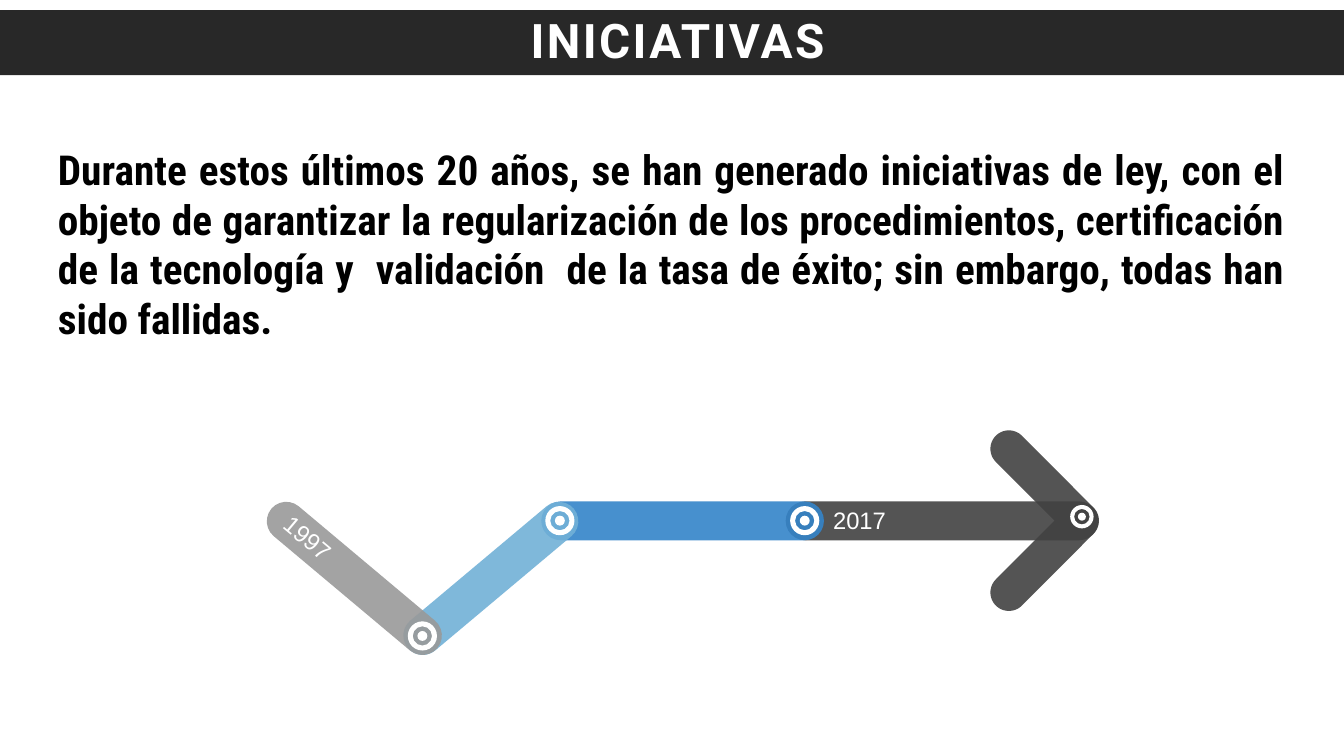
from math import cos, radians, sin

from lxml.etree import SubElement
from pptx import Presentation
from pptx.dml.color import RGBColor
from pptx.enum.shapes import MSO_SHAPE as SHP
from pptx.enum.text import MSO_ANCHOR as ANC, MSO_AUTO_SIZE as AUTO, PP_ALIGN as AL
from pptx.oxml.ns import qn
from pptx.util import Cm, Pt

prs = Presentation()
prs.slide_width, prs.slide_height = Cm(67.74), Cm(38.1)
s = prs.slides.add_slide(prs.slide_layouts[6])


def paint(sp, color, alpha=None):
    sp.shadow.inherit = False
    sp.line.fill.background()
    sp.fill.solid()
    sp.fill.fore_color.rgb = RGBColor.from_string(color)
    if alpha:
        clr = sp.fill._xPr.find(".//" + qn("a:srgbClr"))
        SubElement(clr, qn("a:alpha")).set("val", str(alpha * 1000))


def write(sp, text, color, inset, para, font):
    tf = sp.text_frame
    frame = {"word_wrap": True, "auto_size": AUTO.SHAPE_TO_FIT_TEXT,
             "vertical_anchor": ANC.MIDDLE}
    for side in ("left", "right", "top", "bottom"):
        frame["margin_" + side] = Cm(inset)
    p = tf.paragraphs[0]
    r = p.add_run()
    r.text = text
    for obj, values in ((tf, frame), (p, para), (r.font, font)):
        for name, value in values.items():
            setattr(obj, name, value)
    r.font.color.rgb = RGBColor.from_string(color)
    return r


sp = s.shapes.add_textbox(Cm(2.72), Cm(6.35), Cm(62.28), Cm(11.84))
write(sp, "Durante estos últimos 20 años, se han generado iniciativas de ley, "
      "con el objeto de garantizar la regularización de los procedimientos, "
      "certificación de la tecnología y  validación  de la tasa de éxito; "
      "sin embargo, todas han sido fallidas.", "000000", 0.2,
      {"alignment": AL.JUSTIFY, "space_before": Pt(45)},
      {"name": "Roboto Condensed", "size": Pt(59), "bold": True})

radius, mid = 0.93, 26.24
pts = []
for x, y, start, end in ((50.85, mid - 3.62, 135, 315),
                         (54.46, mid, -45, 45),
                         (50.85, mid + 3.62, 45, 225)):
    for deg in range(start, end + 1, 5):
        a = radians(deg)
        pts.append((Cm(x + radius * cos(a)), Cm(y + radius * sin(a))))
pts.append((Cm(53.15), Cm(mid)))
fb = s.shapes.build_freeform(*pts[0])
fb.add_line_segments(pts[1:], close=True)
paint(fb.convert_to_shape(), "424242", 90)

stages = [
    ("424242", 39.6, 25.27, 15.77, 0, 54.53, 26.04, 1.18, ("2017", 41.99, 25.5)),
    ("3484C9", 27.28, 25.27, 14.25, 0, 40.56, mid, 1.47, None),
    ("72B1D7", 19.28, 28.17, 10.92, 320, 28.22, mid, 1.47, None),
    ("999999", 12.4, 28.17, 10.92, 40, 21.29, 32.05, 1.47, ("1997", 14.15, 26.47)),
]
for color, x, y, w, rot, cx, cy, size, year in stages:
    sp = s.shapes.add_shape(SHP.ROUNDED_RECTANGLE, Cm(x), Cm(y), Cm(w), Cm(1.96))
    sp.adjustments[0] = 0.5
    sp.rotation = rot
    paint(sp, color, 90)

    for kind, d in ((SHP.DONUT, size), (SHP.OVAL, size * 0.34)):
        sp = s.shapes.add_shape(kind, Cm(cx - d / 2), Cm(cy - d / 2), Cm(d), Cm(d))
        if kind == SHP.DONUT:
            sp.adjustments[0] = 0.17
        paint(sp, "FFFFFF")

    if year:
        text, x, y = year
        sp = s.shapes.add_textbox(Cm(x), Cm(y), Cm(2.97), Cm(1.42))
        sp.rotation = rot
        write(sp, text, "FFFFFF", 0, {"space_before": Pt(7)},
              {"name": "Arial", "size": Pt(34)})

sp = s.shapes.add_shape(SHP.RECTANGLE, Cm(-0.13), Cm(0.51), Cm(68.58), Cm(3.28))
paint(sp, "282828")
r = write(sp, "INICIATIVAS", "FFFFFF", 0,
          {"alignment": AL.CENTER, "line_spacing": 0.9},
          {"name": "Roboto", "size": Pt(68), "bold": True})
r._r.get_or_add_rPr().set("spc", "340")

prs.save("out.pptx")
